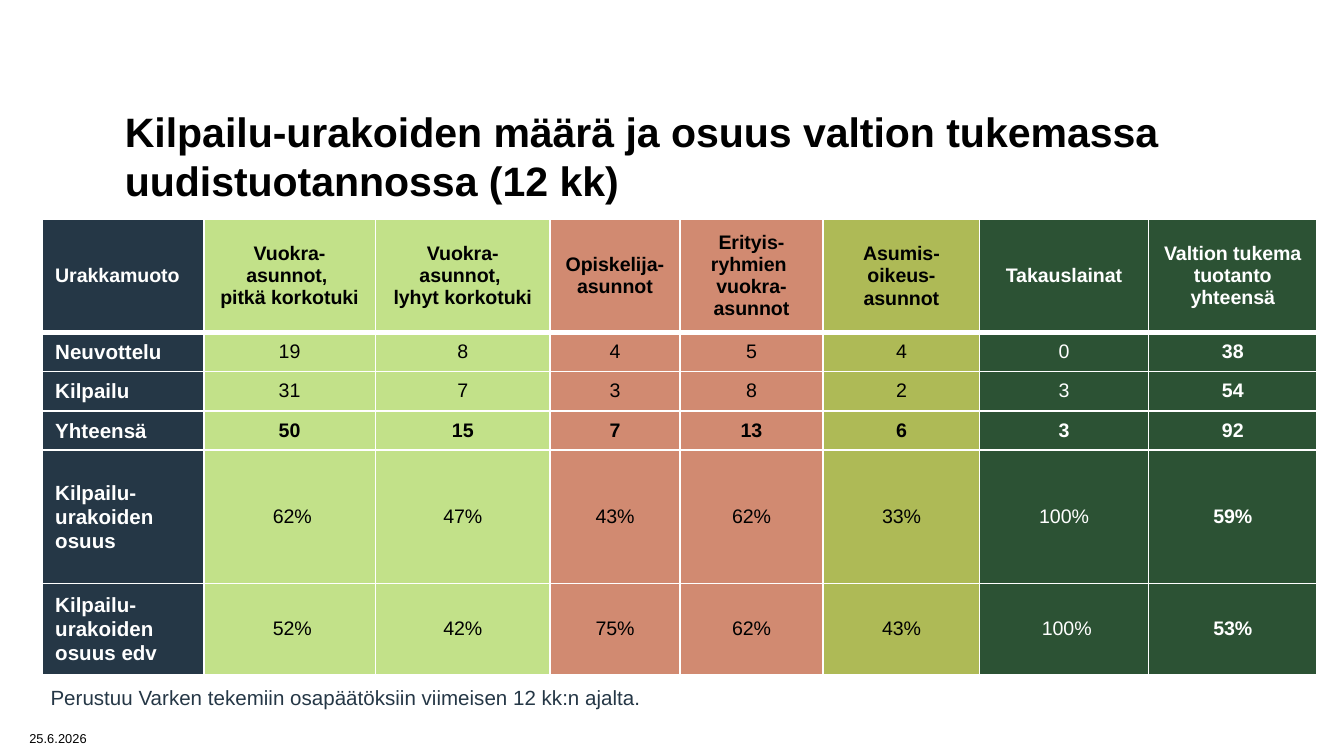
from lxml import etree
from pptx import Presentation
from pptx.dml import color
from pptx.enum import text
from pptx.oxml import ns
from pptx.util import Pt

COLORS = {"white": "FFFFFF", "black": "000000", "navy": "253746", "lime": "C2E189",
          "clay": "D18A71", "olive": "AEBA56", "forest": "2C5234"}

COLUMNS = [
    ("Urakkamuoto", 86.8, "navy"),
    ("Vuokra-asunnot, \npitkä korkotuki", 91.9, "lime"),
    ("Vuokra-asunnot, \nlyhyt korkotuki", 93.7, "lime"),
    ("Opiskelija-asunnot", 69.4, "clay"),
    ("Erityis-ryhmien \nvuokra-asunnot", 76.9, "clay"),
    ("Asumis-oikeus-asunnot", 83.8, "olive"),
    ("Takauslainat", 90.4, "forest"),
    ("Valtion tukema tuotanto yhteensä", 90.4, "forest"),
]
CONTRACTS = [
    ("Neuvottelu", "19", "8", "4", "5", "4", "0", "38"),
    ("Kilpailu", "31", "7", "3", "8", "2", "3", "54"),
    ("Yhteensä", "50", "15", "7", "13", "6", "3", "92"),
    ("Kilpailu-urakoiden osuus", " 62%", "47%", "43%", "62%", "33%", "100%", "59%"),
    ("Kilpailu-urakoiden osuus edv", " 52%", "42%", "75%", "62%", "43%", " 100%", "53%"),
]
ROW_HEIGHTS = [60.5, 20.1, 20.1, 20.1, 71.5, 45]


class SlideBuilder:
    font_name = "Arial"

    def __init__(self, slide):
        self.slide = slide

    def add_runs(self, paragraph, content, size, tone, bold=False):
        for number, line in enumerate(content.split("\n")):
            if number:
                paragraph.add_line_break()
            run = paragraph.add_run()
            run.text = line
            run.font.name = self.font_name
            run.font.size = Pt(size)
            run.font.bold = bold
            run.font.color.rgb = color.RGBColor.from_string(COLORS[tone])
        return run

    def textbox(self, left, top, width, height, content, size, tone, bold=False,
                anchor=text.MSO_ANCHOR.TOP):
        frame = self.slide.shapes.add_textbox(Pt(left), Pt(top), Pt(width), Pt(height)).text_frame
        frame.word_wrap = True
        frame.vertical_anchor = anchor
        return self.add_runs(frame.paragraphs[0], content, size, tone, bold)

    def borders(self, cell, bottom):
        properties = cell._tc.get_or_add_tcPr()
        for side, width in (("L", 1), ("R", 1), ("T", 1), ("B", bottom)):
            line = etree.SubElement(properties, ns.qn(f"a:ln{side}"), w=str(Pt(width)))
            fill = etree.SubElement(line, ns.qn("a:solidFill"))
            etree.SubElement(fill, ns.qn("a:srgbClr"), val=COLORS["white"])

    def cell(self, cell, content, fill, size, bold, centered, spaced, bottom=1, margin=None):
        self.borders(cell, bottom)
        cell.fill.solid()
        cell.fill.fore_color.rgb = color.RGBColor.from_string(COLORS[fill])
        cell.vertical_anchor = text.MSO_ANCHOR.MIDDLE
        if margin is not None:
            cell.margin_left = cell.margin_right = Pt(margin)
            cell.margin_top = cell.margin_bottom = Pt(margin)
        paragraph = cell.text_frame.paragraphs[0]
        if centered:
            paragraph.alignment = text.PP_ALIGN.CENTER
        if spaced:
            paragraph.line_spacing = 1.05
            paragraph.space_after = Pt(8)
        tone = "white" if fill in ("navy", "forest") else "black"
        self.add_runs(paragraph, content, size, tone, bold)

    def table(self, left, top, columns, contracts, heights):
        widths = [width for _, width, _ in columns]
        grid = self.slide.shapes.add_table(len(heights), len(columns), Pt(left), Pt(top),
                                           Pt(sum(widths)), Pt(sum(heights))).table
        for column, width in zip(grid.columns, widths):
            column.width = Pt(width)
        for row, height in zip(grid.rows, heights):
            row.height = Pt(height)
        last = len(columns) - 1
        for c, (heading, _, fill) in enumerate(columns):
            self.cell(grid.cell(0, c), heading, fill, 10.5, True, c > 0, fill == "olive", bottom=3)
            for r, contract in enumerate(contracts, 1):
                is_label = c == 0
                bold = c in (0, last) or contract[0] == "Yhteensä"
                self.cell(grid.cell(r, c), contract[c], fill, 11 if is_label else 10.5, bold,
                          not is_label, is_label, margin=None if is_label else 2.9)


def main():
    deck = Presentation()
    deck.slide_width, deck.slide_height = Pt(720), Pt(405)
    builder = SlideBuilder(deck.slides.add_slide(deck.slide_layouts[6]))
    builder.textbox(59.8, 69.8, 646.6, 27.4,
                    "Kilpailu-urakoiden määrä ja osuus valtion tukemassa uudistuotannossa (12 kk)",
                    22, "black", bold=True, anchor=text.MSO_ANCHOR.MIDDLE)
    builder.table(22.4, 117.4, COLUMNS, CONTRACTS, ROW_HEIGHTS)
    builder.textbox(20, 363.6, 551.5, 20.9,
                    "Perustuu Varken tekemiin osapäätöksiin viimeisen 12 kk:n ajalta.", 11, "navy")
    date = builder.textbox(8.6, 386.6, 126, 18, "25.6.2026", 12, "black")
    date._r.get_or_add_rPr().set("baseline", "30000")
    deck.save("out.pptx")


if __name__ == "__main__":
    main()
